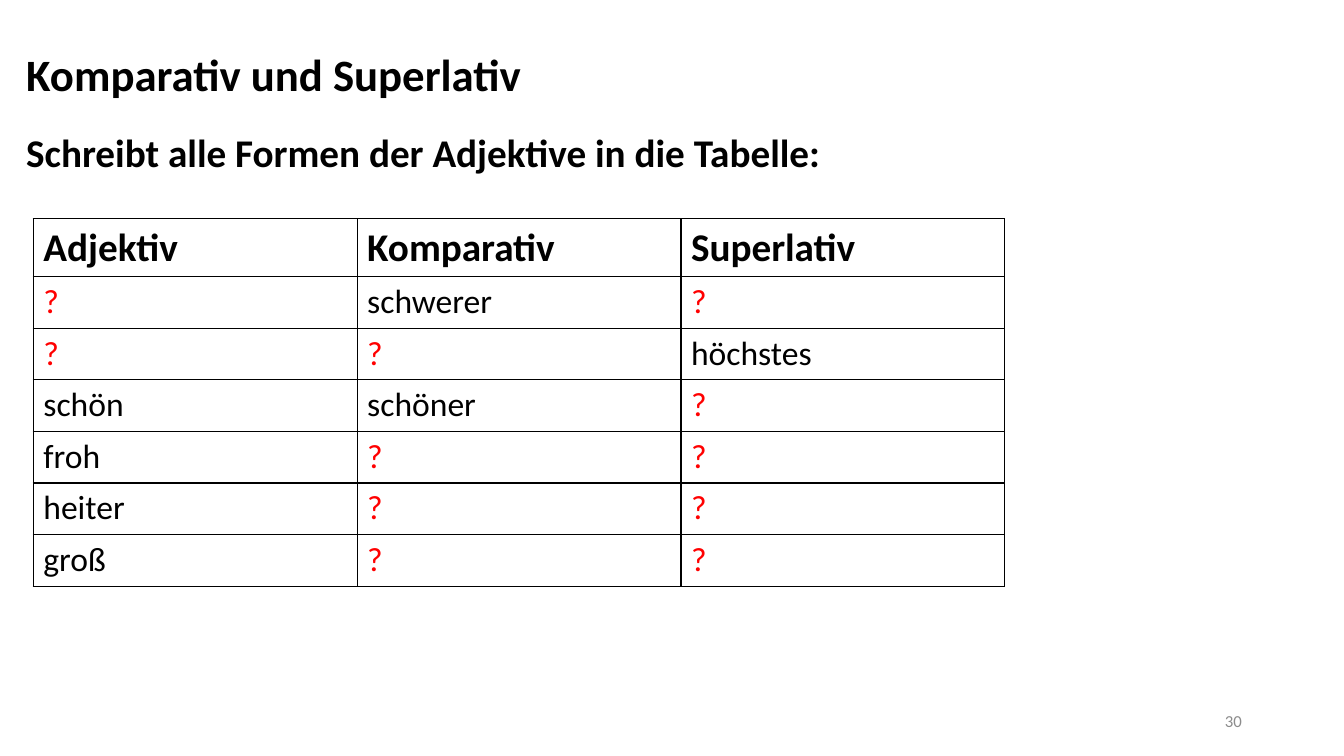
from dataclasses import dataclass

from lxml.etree import SubElement
from pptx import Presentation
from pptx.dml.color import RGBColor
from pptx.enum.text import MSO_ANCHOR as Anchor, PP_ALIGN as Align
from pptx.oxml.ns import qn
from pptx.util import Cm, Pt


@dataclass(frozen=True)
class Theme:
    font: str = "Calibri"
    black: str = "000000"
    red: str = "FF0000"
    gray: str = "8C8C8C"
    title: int = 32
    heading: int = 28
    body: int = 24
    small: int = 12
    border: int = 1


THEME = Theme()
GAP = "?"
ADJECTIVES = [
    ("Adjektiv", "Komparativ", "Superlativ"),
    (GAP, "schwerer", GAP),
    (GAP, GAP, "höchstes"),
    ("schön", "schöner", GAP),
    ("froh", GAP, GAP),
    ("heiter", GAP, GAP),
    ("groß", GAP, GAP),
]


def write(tf, text, *, size, color=THEME.black, bold=False, align=Align.LEFT, spacing=1.0):
    p = tf.paragraphs[0]
    p.alignment = align
    p.line_spacing = spacing
    r = p.add_run()
    r.text = text
    r.font.name = THEME.font
    r.font.size = Pt(size)
    r.font.bold = bold
    r.font.color.rgb = RGBColor.from_string(color)


def add_text(s, text, left, top, width, height, anchor=Anchor.MIDDLE, **style):
    sp = s.shapes.add_textbox(Cm(left), Cm(top), Cm(width), Cm(height))
    tf = sp.text_frame
    tf.word_wrap = True
    tf.vertical_anchor = anchor
    write(tf, text, **style)


def add_borders(cell):
    tc_pr = cell._tc.get_or_add_tcPr()
    for side in ("lnL", "lnR", "lnT", "lnB"):
        ln = SubElement(tc_pr, qn(f"a:{side}"), w=str(Pt(THEME.border)))
        fill = SubElement(ln, qn("a:solidFill"))
        SubElement(fill, qn("a:srgbClr"), val=THEME.black)


def add_table(s, rows, left, top, col_width, header_height, row_height):
    width = col_width * len(rows[0])
    height = header_height + row_height * (len(rows) - 1)
    table = s.shapes.add_table(
        len(rows), len(rows[0]), Cm(left), Cm(top), Cm(width), Cm(height)
    ).table
    table.first_row = table.horz_banding = False
    for column in table.columns:
        column.width = Cm(col_width)
    for i, words in enumerate(rows):
        header = i == 0
        table.rows[i].height = Cm(header_height if header else row_height)
        for j, word in enumerate(words):
            cell = table.cell(i, j)
            add_borders(cell)
            cell.fill.background()
            write(
                cell.text_frame,
                word,
                size=THEME.heading if header else THEME.body,
                color=THEME.red if word == GAP else THEME.black,
                bold=header,
            )


def main():
    """Build the slide on comparative and superlative forms and save it."""
    prs = Presentation()
    prs.slide_width, prs.slide_height = Cm(33.87), Cm(19.05)
    s = prs.slides.add_slide(prs.slide_layouts[6])
    add_text(s, "Komparativ und Superlativ", 0.41, 0.61, 29.18, 2.64,
             size=THEME.title, bold=True, spacing=0.9)
    add_text(s, "Schreibt alle Formen der Adjektive in die Tabelle:", 0.41, 3.25, 32.84, 15.34,
             anchor=Anchor.TOP, size=THEME.heading, bold=True, spacing=0.9)
    add_table(s, ADJECTIVES, 0.84, 5.51, col_width=8.16, header_height=1.46, row_height=1.3)
    add_text(s, "30", 23.93, 17.65, 7.62, 1.02,
             size=THEME.small, color=THEME.gray, align=Align.RIGHT)
    prs.save("out.pptx")


if __name__ == "__main__":
    main()
